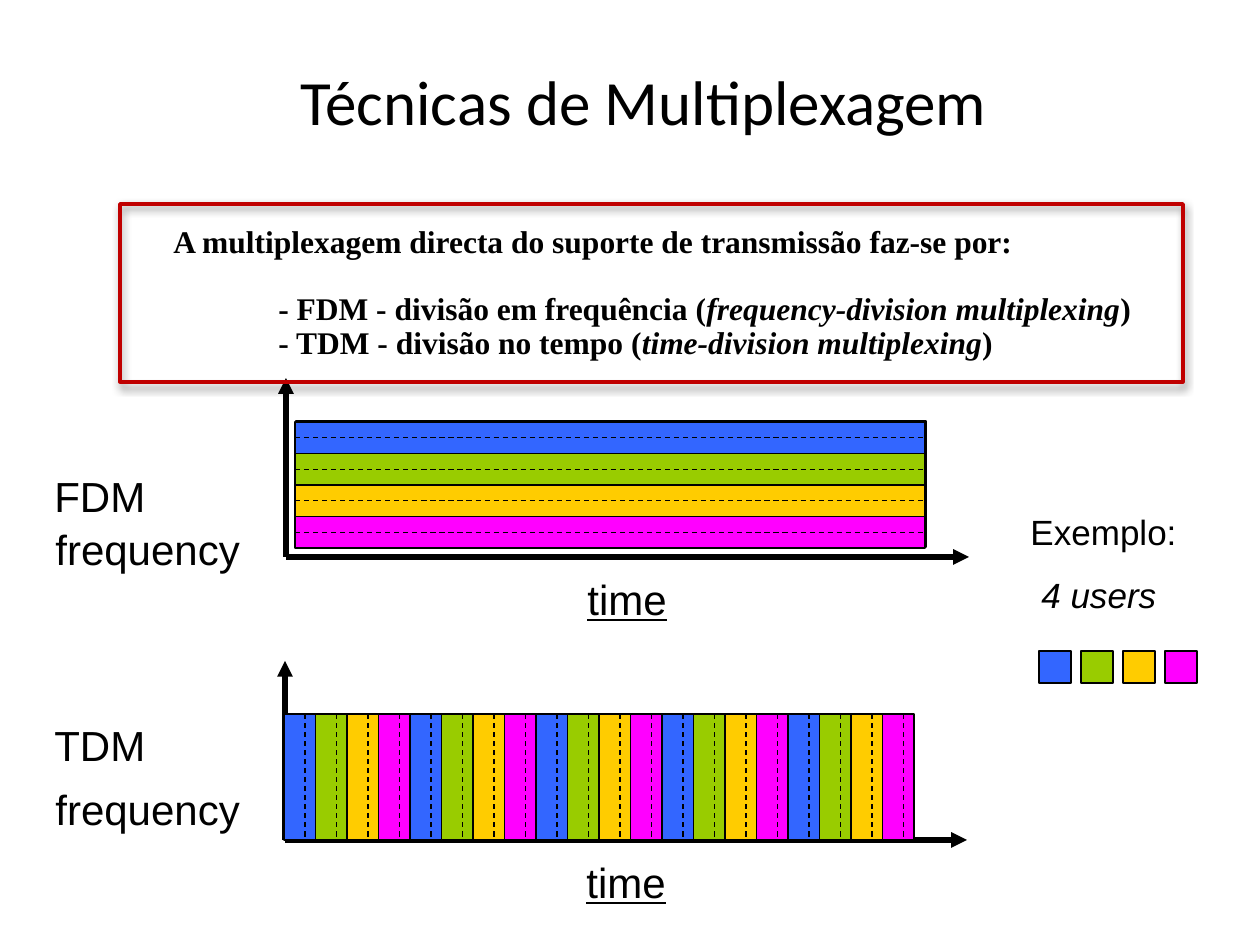
import collections

import lxml.etree
import pptx
import pptx.dml.color
import pptx.enum.dml
import pptx.enum.shapes
import pptx.enum.text
import pptx.oxml
import pptx.oxml.ns
import pptx.util

EMU_PER_PX = 914400 / 126

Box = collections.namedtuple("Box", "left top width height")

THEME = {
    "ink": "000000",
    "plate": "4F81BD",
    "frame": "C00000",
    "users": ["3366FF", "99CC00", "FFCC00", "FF00FF"],
    "thin": 0.75,
    "frame_line": 2,
    "axis_line": 3,
    "title": {"name": "Calibri", "size": pptx.util.Pt(36)},
    "summary": {"name": "Times New Roman", "size": pptx.util.Pt(18), "bold": True},
    "label": {"name": "Arial", "size": pptx.util.Pt(24)},
    "legend": {"name": "Arial", "size": pptx.util.Pt(20)},
}


def px(length):
    return pptx.util.Emu(round(length * EMU_PER_PX))


def colour(value):
    return pptx.dml.color.RGBColor.from_string(value)


def apply_format(target, values):
    for name, value in values.items():
        setattr(target, name, value)


def add_effects(shape, content=""):
    namespace = pptx.oxml.ns.nsdecls("a")
    effects = pptx.oxml.parse_xml(f"<a:effectLst {namespace}>{content}</a:effectLst>")
    shape._element.spPr.append(effects)


def add_run(paragraph, text, values):
    run = paragraph.add_run()
    run.text = text
    apply_format(run.font, values)
    run.font.color.rgb = colour(THEME["ink"])


def add_text_frame(slide, box, wrap=False):
    shape = slide.shapes.add_textbox(*map(px, box))
    shape.text_frame.word_wrap = wrap
    return shape.text_frame


def add_label(slide, box, text, values):
    frame = add_text_frame(slide, box)
    add_run(frame.paragraphs[0], text, values)


def add_rectangle(slide, box, fill=None, line=THEME["ink"], weight=THEME["thin"]):
    kind = pptx.enum.shapes.MSO_SHAPE.RECTANGLE
    shape = slide.shapes.add_shape(kind, *map(px, box))
    if fill:
        shape.fill.solid()
        shape.fill.fore_color.rgb = colour(fill)
    else:
        shape.fill.background()
    shape.line.color.rgb = colour(line)
    shape.line.width = pptx.util.Pt(weight)
    shape.shadow.inherit = False
    return shape


def add_line(slide, start, end, weight=THEME["thin"], dashed=False, arrow=False):
    kind = pptx.enum.shapes.MSO_CONNECTOR.STRAIGHT
    connector = slide.shapes.add_connector(kind, *map(px, start + end))
    connector.line.color.rgb = colour(THEME["ink"])
    connector.line.width = pptx.util.Pt(weight)
    if dashed:
        connector.line.dash_style = pptx.enum.dml.MSO_LINE.DASH
    if arrow:
        outline = connector.line._get_or_add_ln()
        tail = pptx.oxml.ns.qn("a:tailEnd")
        lxml.etree.SubElement(outline, tail, type="triangle")
    add_effects(connector)


def add_title(slide, box):
    frame = add_text_frame(slide, box, wrap=True)
    frame.vertical_anchor = pptx.enum.text.MSO_ANCHOR.MIDDLE
    paragraph = frame.paragraphs[0]
    paragraph.alignment = pptx.enum.text.PP_ALIGN.CENTER
    add_run(paragraph, "Técnicas de Multiplexagem", THEME["title"])


def add_summary(slide, box):
    text_box = Box(box.left + 41, box.top + 16, 984, 183)
    frame = add_text_frame(slide, text_box)
    heading = frame.paragraphs[0]
    heading.line_spacing = 0.9
    heading.space_after = pptx.util.Pt(19)
    text = "A multiplexagem directa do suporte de transmissão faz-se por:"
    add_run(heading, text, THEME["summary"])
    techniques = [
        ("- FDM - divisão em frequência (", "frequency-division multiplexing"),
        ("- TDM - divisão no tempo (", "time-division multiplexing"),
    ]
    for description, english in techniques:
        paragraph = frame.add_paragraph()
        paragraph.line_spacing = 0.9
        paragraph._p.get_or_add_pPr().set("marL", str(px(105)))
        add_run(paragraph, description, THEME["summary"])
        add_run(paragraph, english, {**THEME["summary"], "italic": True})
        add_run(paragraph, ")", THEME["summary"])

    border = add_rectangle(slide, box, None, THEME["frame"], THEME["frame_line"])
    border._element.spPr.remove(border._element.spPr.find(pptx.oxml.ns.qn("a:effectLst")))
    add_effects(
        border,
        '<a:outerShdw blurRad="63500" dist="30480" dir="5400000" rotWithShape="0">'
        f'<a:srgbClr val="{THEME["ink"]}"><a:alpha val="45000"/></a:srgbClr>'
        "</a:outerShdw>",
    )


def add_axes(slide, box, name, name_rise, frequency_rise):
    bottom = box.top + box.height
    origin = (box.left, bottom)
    for end in [(box.left, box.top), (box.left + box.width, bottom)]:
        add_line(slide, origin, end, THEME["axis_line"], arrow=True)
    add_label(slide, Box(42, bottom - name_rise, 116, 63), name, THEME["label"])
    frequency_box = Box(43, bottom - frequency_rise, 210, 63)
    add_label(slide, frequency_box, "frequency", THEME["label"])
    time_box = Box(box.left + 289, bottom + 10, 105, 63)
    add_label(slide, time_box, "time", {**THEME["label"], "underline": True})


def add_strips(slide, box, count, stacked, dash_share):
    step = (box.height if stacked else box.width) / count

    def divide(offset, dashed=False):
        if stacked:
            level = box.top + offset
            start, end = (box.left, level), (box.left + box.width, level)
        else:
            level = box.left + offset
            start, end = (level, box.top), (level, box.top + box.height)
        add_line(slide, start, end, dashed=dashed)

    for index in range(count):
        if stacked:
            strip = Box(box.left, box.top + index * step, box.width, step)
        else:
            strip = Box(box.left + index * step, box.top, step, box.height)
        users = THEME["users"]
        add_rectangle(slide, strip, users[index % len(users)])
    for index in range(1, count):
        divide(index * step)
    for index in range(count):
        divide((index + dash_share) * step, dashed=True)


def add_frequency_division(slide, box):
    add_axes(slide, box, "FDM", name_rise=93, frequency_rise=40)
    add_rectangle(slide, Box(box.left + 10, box.top + 43, 630, 126), THEME["plate"])
    bands = Box(box.left + 9, box.top + 44, 630, 126)
    add_strips(slide, bands, 4, stacked=True, dash_share=1 / 2)


def add_time_division(slide, box):
    add_axes(slide, box, "TDM", name_rise=127, frequency_rise=63)
    slots = Box(box.left - 1, box.top + 53, 630, 126)
    add_strips(slide, slots, 20, stacked=False, dash_share=2 / 3)


def add_legend(slide, box):
    add_label(slide, Box(box.left, box.top, 173, 55), "Exemplo:", THEME["legend"])
    users_box = Box(box.left + 11, box.top + 63, 150, 55)
    add_label(slide, users_box, "4 users", {**THEME["legend"], "italic": True})
    for index, user in enumerate(THEME["users"]):
        swatch = Box(box.left + 21 + index * 42, box.top + 147, 32, 32)
        add_rectangle(slide, swatch, user)


def main():
    presentation = pptx.Presentation()
    presentation.slide_width = px(1260)
    presentation.slide_height = px(945)
    slide = presentation.slides.add_slide(presentation.slide_layouts[6])
    add_title(slide, Box(60, 32, 1167, 136))
    add_frequency_division(slide, Box(286, 378, 683, 179))
    add_time_division(slide, Box(285, 661, 682, 179))
    add_summary(slide, Box(120, 204, 1063, 178))
    add_legend(slide, Box(1018, 504, 180, 179))
    presentation.save("out.pptx")


if __name__ == "__main__":
    main()
